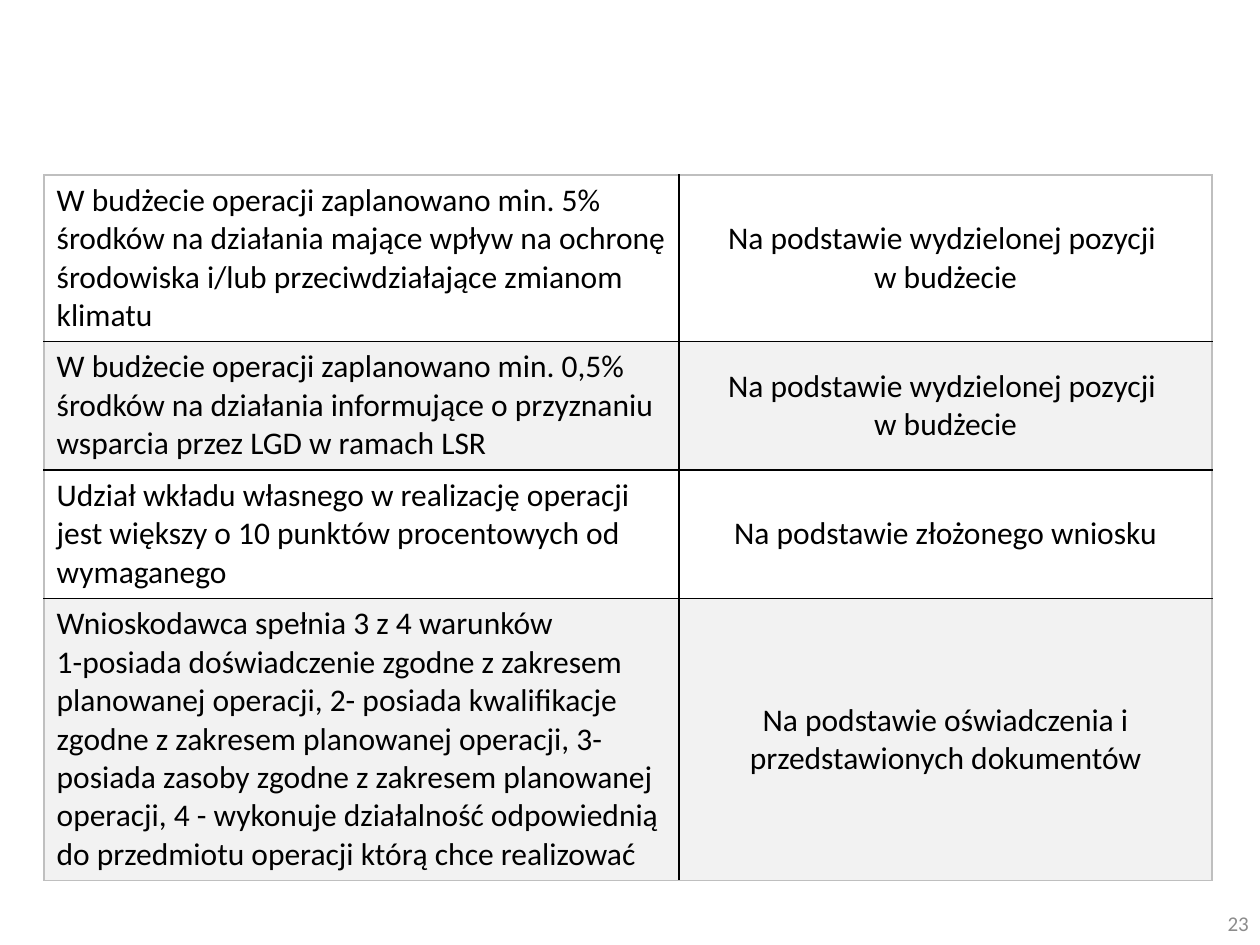
import pptx
import pptx.util
import pptx.dml.color
import pptx.enum.text
import pptx.oxml.ns
from lxml import etree

Inches = pptx.util.Inches
Pt = pptx.util.Pt
ALIGN = pptx.enum.text.PP_ALIGN
MIDDLE = pptx.enum.text.MSO_ANCHOR.MIDDLE
TOP = pptx.enum.text.MSO_ANCHOR.TOP

COLORS = {"text": "000000", "number": "8C8C8C", "inner": "000000",
          "outer": "BFBFBF", "plain": "FFFFFF", "band": "F2F2F2"}

BUDGET = "Na podstawie wydzielonej pozycji \vw budżecie"
# Row height, criterion, way of checking it
ROWS = [
    (1.32, "W budżecie operacji zaplanowano min. 5% środków na działania mające "
           "wpływ na ochronę środowiska i/lub przeciwdziałające zmianom klimatu",
     BUDGET),
    (1.02, "W budżecie operacji zaplanowano min. 0,5% środków na działania "
           "informujące o przyznaniu wsparcia przez LGD w ramach LSR",
     BUDGET),
    (1.02, "Udział wkładu własnego w realizację operacji jest większy o "
           "10 punktów procentowych od wymaganego",
     "Na podstawie złożonego wniosku"),
    (2.24, "Wnioskodawca spełnia 3 z 4 warunków\n"
           "1-posiada doświadczenie zgodne z zakresem planowanej operacji, "
           "2- posiada kwalifikacje zgodne z zakresem planowanej operacji, "
           "3- posiada zasoby zgodne z zakresem planowanej operacji, "
           "4 - wykonuje działalność odpowiednią do przedmiotu operacji którą "
           "chce realizować",
     "Na podstawie oświadczenia i przedstawionych dokumentów"),
]
WIDTHS = [5.04, 4.23]


def rgb(name):
    return pptx.dml.color.RGBColor.from_string(COLORS[name])


def write(frame, text, size=18, color="text", align=ALIGN.LEFT):
    frame.word_wrap = True
    frame.text = text
    for para in frame.paragraphs:
        para.alignment = align
        for run in para.runs:
            run.font.name = "Calibri"
            run.font.size = Pt(size)
            run.font.color.rgb = rgb(color)


def add_edge(cell, side, color):
    """Draw one cell border; side is L, R, T or B, called in that order."""
    tag = pptx.oxml.ns.qn
    props = cell._tc.get_or_add_tcPr()
    line = etree.SubElement(props, tag(f"a:ln{side}"), w=str(Pt(1)))
    fill = etree.SubElement(line, tag("a:solidFill"))
    etree.SubElement(fill, tag("a:srgbClr"), val=COLORS[color])


def fill_cell(cell, text, edges, fill, align, anchor):
    write(cell.text_frame, text, align=align)
    cell.vertical_anchor = anchor
    for side, outer in edges.items():
        add_edge(cell, side, "outer" if outer else "inner")
    cell.fill.solid()
    cell.fill.fore_color.rgb = rgb(fill)


def add_grid(slide):
    high = sum(row[0] for row in ROWS)
    table = slide.shapes.add_table(
        len(ROWS), len(WIDTHS), Inches(0.35), Inches(1.39),
        Inches(sum(WIDTHS)), Inches(high)).table
    table.first_row = table.horz_banding = False
    for column, width in zip(table.columns, WIDTHS):
        column.width = Inches(width)
    for r, (height, *texts) in enumerate(ROWS):
        table.rows[r].height = Inches(height)
        for c, text in enumerate(texts):
            edges = {"L": c == 0, "R": c == len(WIDTHS) - 1,
                     "T": r == 0, "B": r == len(ROWS) - 1}
            fill_cell(table.cell(r, c), text, edges,
                      fill="band" if r % 2 else "plain",
                      align=ALIGN.CENTER if c else ALIGN.LEFT,
                      anchor=MIDDLE if c else TOP)


def add_number(slide, text):
    box = slide.shapes.add_textbox(
        Inches(7.68), Inches(7.13), Inches(2.33), Inches(0.4))
    box.text_frame.vertical_anchor = MIDDLE
    write(box.text_frame, text, size=12, color="number", align=ALIGN.RIGHT)


def main():
    deck = pptx.Presentation()
    deck.slide_width, deck.slide_height = Inches(10), Inches(7.5)
    slide = deck.slides.add_slide(deck.slide_layouts[6])
    add_number(slide, "23")
    add_grid(slide)
    deck.save("out.pptx")


if __name__ == "__main__":
    main()
